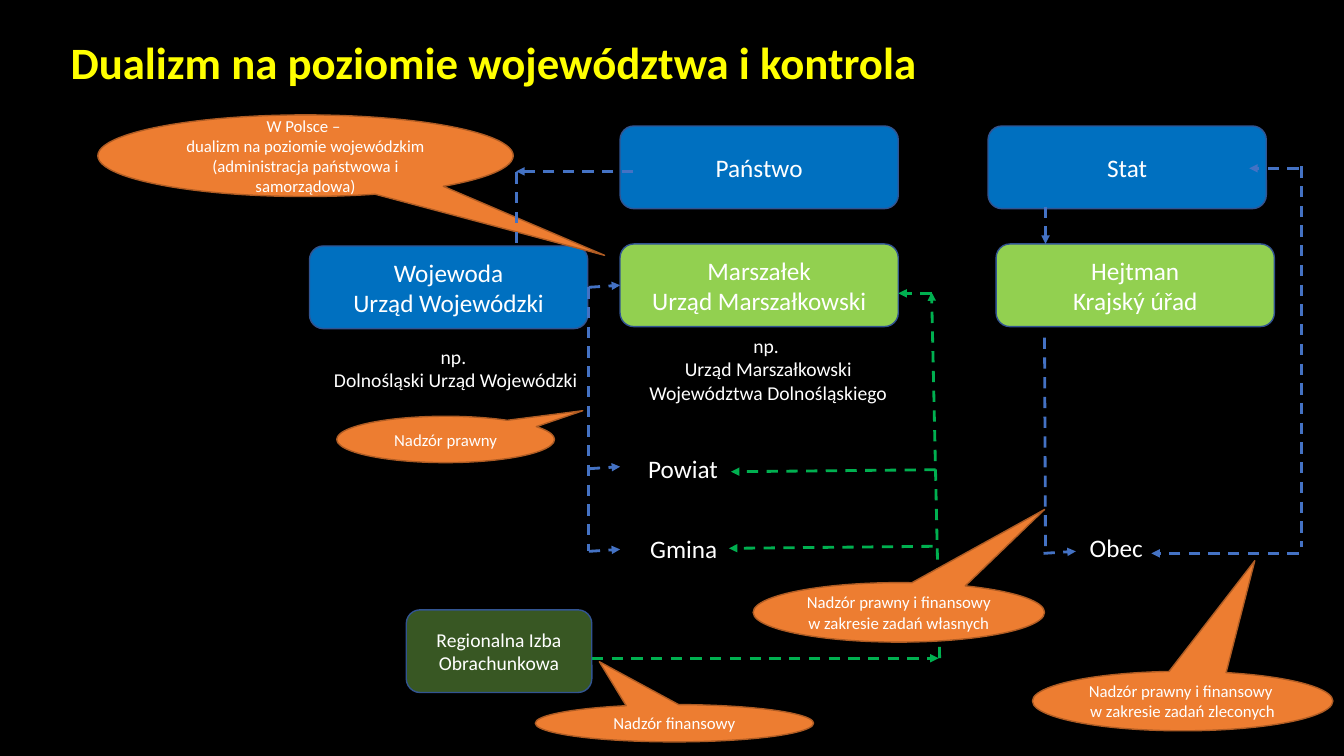
from lxml.etree import SubElement
from pptx import Presentation
from pptx.dml.color import RGBColor
from pptx.enum.dml import MSO_LINE
from pptx.enum.shapes import MSO_CONNECTOR, MSO_SHAPE
from pptx.enum.text import MSO_ANCHOR, MSO_AUTO_SIZE, PP_ALIGN
from pptx.oxml.ns import qn
from pptx.util import Inches, Pt

# The grid has ten columns and ten rows to the inch
COLS, ROWS = 133.3, 75
CELL = Inches(0.1)
FONT = "Calibri"
COLORS = {
    "background": "000000", "title": "FFFF00", "text": "FFFFFF",
    "state": "0070C0", "region": "92D050", "chamber": "385723",
    "box edge": "325491", "callout": "ED7D31", "callout edge": "AF5C24",
    "legal": "4472C4", "financial": "00B050",
}
BOX_W, BOX_H = 27.6, 8.2
POLAND, CZECHIA = 61.5, 98  # left columns of the two countries
TOP_ROW, REGION_ROW = 12.5, 24.2
TRUNK = 58.4  # column of the voivode's supervision line


def color(name):
    return RGBColor.from_string(COLORS[name])


def grid(*cells):
    return [round(cell * CELL) for cell in cells]


def write(frame, lines, size, align=PP_ALIGN.CENTER, ink="text", bold=False):
    for number, line in enumerate(lines):
        paragraph = frame.paragraphs[0] if number == 0 else frame.add_paragraph()
        paragraph.alignment = align
        run = paragraph.add_run()
        run.text = line
        run.font.name = FONT
        run.font.size = Pt(size)
        run.font.bold = bold
        run.font.color.rgb = color(ink)


def add_title(slide, wording):
    title = slide.shapes.title
    title.left, title.top, title.width, title.height = grid(6, 1.6, 117.9, 9.7)
    frame = title.text_frame
    frame.vertical_anchor = MSO_ANCHOR.MIDDLE
    frame.word_wrap = True
    write(frame, [wording], 32, PP_ALIGN.LEFT, "title", True)
    frame.paragraphs[0].line_spacing = 0.9


def add_filled(slide, kind, place, fill, edge, lines, size):
    shape = slide.shapes.add_shape(kind, *grid(*place))
    shape.shadow.inherit = False
    shape.fill.solid()
    shape.fill.fore_color.rgb = color(fill)
    shape.line.color.rgb = color(edge)
    shape.line.width = Pt(1)
    shape.text_frame.word_wrap = True
    shape.text_frame.vertical_anchor = MSO_ANCHOR.MIDDLE
    write(shape.text_frame, lines, size)
    return shape


def add_office(slide, left, top, fill, lines, width=BOX_W, size=18):
    add_filled(slide, MSO_SHAPE.ROUNDED_RECTANGLE, (left, top, width, BOX_H),
               fill, "box edge", lines, size)


def add_callout(slide, place, tip, lines):
    callout = add_filled(slide, MSO_SHAPE.OVAL_CALLOUT, place,
                         "callout", "callout edge", lines, 12)
    callout.adjustments[0], callout.adjustments[1] = tip


def add_label(slide, place, lines, size=18, align=PP_ALIGN.LEFT):
    frame = slide.shapes.add_textbox(*grid(*place)).text_frame
    frame.word_wrap = False
    frame.auto_size = MSO_AUTO_SIZE.SHAPE_TO_FIT_TEXT
    write(frame, lines, size, align)


def add_link(slide, kind, start, end, arrow=True):
    link = slide.shapes.add_connector(MSO_CONNECTOR.STRAIGHT, *grid(*start, *end))
    link.line.color.rgb = color(kind)
    link.line.width = Pt(2)
    link.line.dash_style = MSO_LINE.DASH
    if arrow:
        SubElement(link.line._get_or_add_ln(), qn("a:tailEnd"), type="triangle")
    SubElement(link._element.spPr, qn("a:effectLst"))


def add_offices(slide):
    add_office(slide, 30.7, 24.4, "state", ["Wojewoda", "Urząd Wojewódzki"])
    add_office(slide, POLAND, TOP_ROW, "state", ["Państwo"])
    add_office(slide, POLAND, REGION_ROW, "region",
               ["Marszałek", "Urząd Marszałkowski"])
    add_office(slide, CZECHIA, TOP_ROW, "state", ["Stat"])
    add_office(slide, CZECHIA + 0.8, REGION_ROW, "region",
               ["Hejtman", "Krajský úřad"])
    add_office(slide, 40.3, 60.5, "chamber",
               ["Regionalna Izba Obrachunkowa"], 18.4, 14)


def add_labels(slide):
    # Examples of offices
    add_label(slide, (32, 33.7, 26.4, 5.7),
              ["np. ", "Dolnośląski Urząd Wojewódzki"], 14, PP_ALIGN.CENTER)
    add_label(slide, (63.3, 32.6, 25.8, 8.1),
              ["np. ", "Urząd Marszałkowski", "Województwa Dolnośląskiego"],
              14, PP_ALIGN.CENTER)
    # Lower tiers
    add_label(slide, (63.3, 44.5, 9, 4), ["Powiat"])
    add_label(slide, (63.5, 52.4, 8.8, 4), ["Gmina"])
    add_label(slide, (107.1, 52.3, 7.3, 4), ["Obec"])


def add_legal_links(slide):
    # State to voivode
    add_link(slide, "legal", (51.2, 17.1), (51.2, 24.5), False)
    add_link(slide, "legal", (62.8, 17), (51.2, 17))
    # Voivode to the three tiers of self-government
    add_link(slide, "legal", (TRUNK, 28.5), (TRUNK, 54.7), False)
    for row in (28.5, 46.5, 54.7):
        add_link(slide, "legal", (TRUNK, row), (POLAND, row - 0.2))
    # Czech state, region and municipality
    add_link(slide, "legal", (103.7, 20.5), (103.7, 24.2))
    add_link(slide, "legal", (103.6, 33.5), (103.7, 54.9), False)
    add_link(slide, "legal", (103.5, 54.9), (106.7, 54.7))
    add_link(slide, "legal", (129.1, 16.5), (129.1, 54.3), False)
    add_link(slide, "legal", (128.8, 54.9), (114.2, 54.9))
    add_link(slide, "legal", (128.8, 16.7), (123.9, 16.7))


def add_financial_links(slide):
    for start, end in (
        ((58.7, 65.3), (93.1, 65.3)),
        ((93.2, 65.3), (92.4, 29)),
        ((92.5, 54.2), (72.3, 54.4)),
        ((92.8, 46.6), (72.5, 46.8)),
        ((92.4, 29.1), (89.1, 29.1)),
    ):
        add_link(slide, "financial", start, end)


def main():
    deck = Presentation()
    deck.slide_width, deck.slide_height = grid(COLS, ROWS)
    slide = deck.slides.add_slide(deck.slide_layouts[5])
    slide.background.fill.solid()
    slide.background.fill.fore_color.rgb = color("background")

    add_title(slide, "Dualizm na poziomie województwa i kontrola")
    add_offices(slide)
    add_labels(slide)

    # Callouts beneath the links
    add_callout(slide, (9.7, 11.4, 41.2, 8.1), (0.72, 1.22),
                ["W Polsce – ", "dualizm na poziomie wojewódzkim",
                 "(administracja państwowa i samorządowa)"])
    add_callout(slide, (33.4, 41.3, 21.6, 4.6), (0.63, -0.62), ["Nadzór prawny"])
    add_callout(slide, (102.4, 66.6, 29.8, 5.9), (0.24, -2.36),
                ["Nadzór prawny i finansowy ", "w zakresie zadań zleconych"])
    add_callout(slide, (53.1, 69.9, 27.6, 3.7), (-0.27, -1.65),
                ["Nadzór finansowy"])

    add_legal_links(slide)
    add_financial_links(slide)

    # Callout above the financial line
    add_callout(slide, (74.7, 57.8, 28.9, 5.9), (0.5, -1.73),
                ["Nadzór prawny i finansowy ", "w zakresie zadań własnych"])
    deck.save("out.pptx")


if __name__ == "__main__":
    main()
